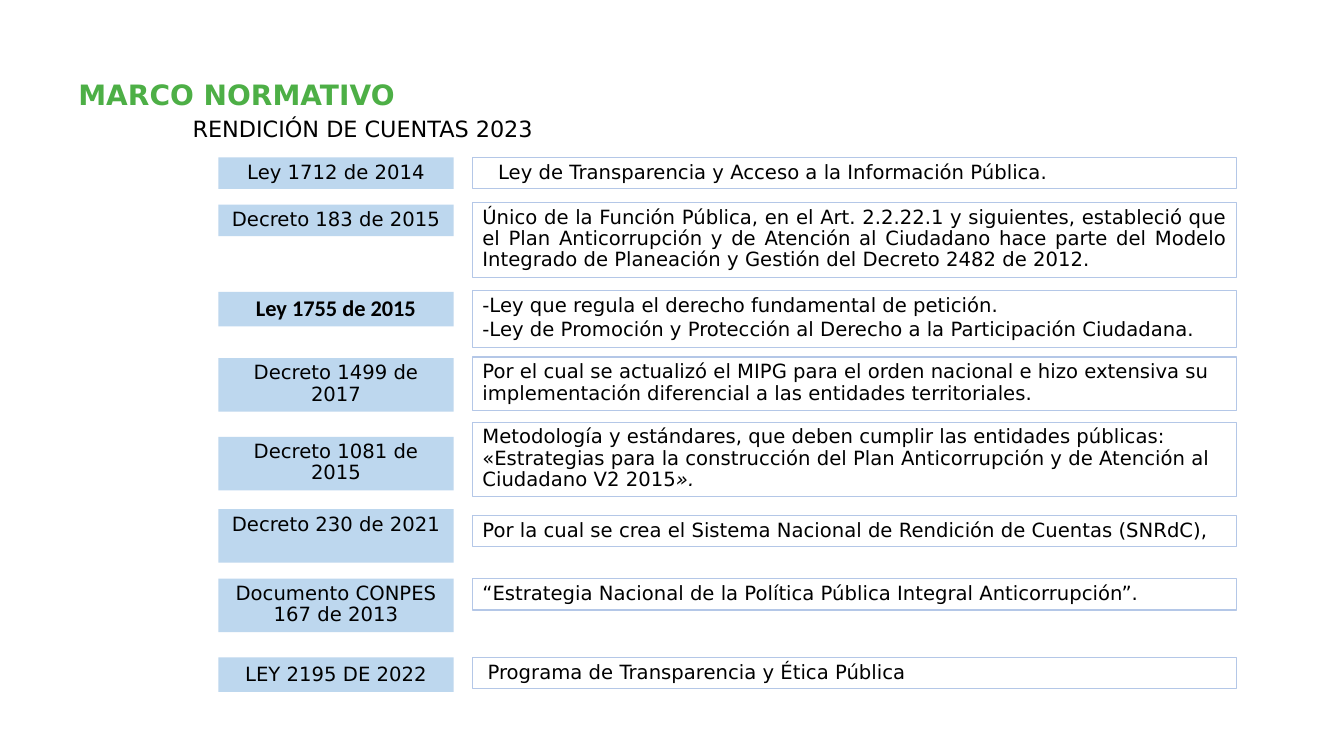
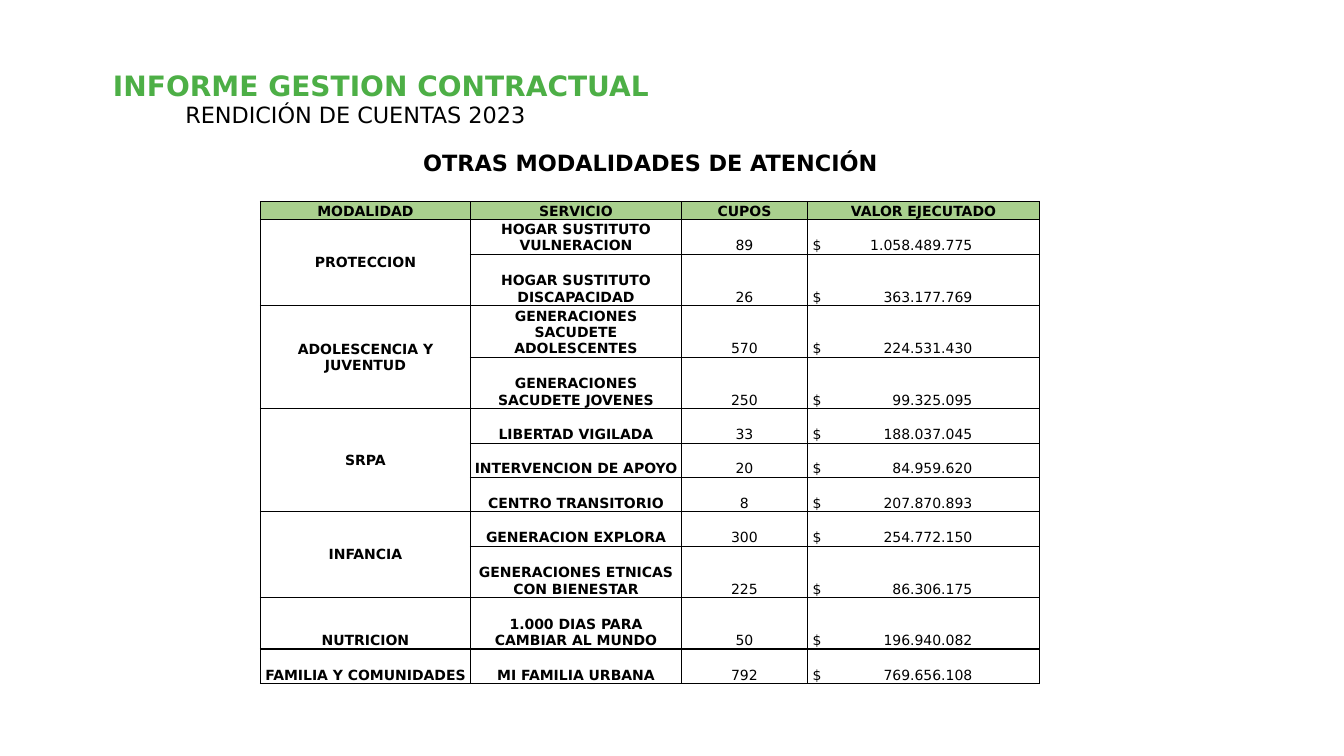
from lxml import etree
from pptx import Presentation
from pptx.dml.color import RGBColor
from pptx.enum.shapes import MSO_SHAPE
from pptx.enum.text import MSO_ANCHOR, PP_ALIGN
from pptx.oxml.ns import qn
from pptx.util import Pt

PX = 9525
RECT = MSO_SHAPE.RECTANGLE
TOP, MIDDLE, BOTTOM = MSO_ANCHOR.TOP, MSO_ANCHOR.MIDDLE, MSO_ANCHOR.BOTTOM
LEFT, CENTER, JUSTIFY = PP_ALIGN.LEFT, PP_ALIGN.CENTER, PP_ALIGN.JUSTIFY
FONT, ALT_FONT = "DejaVu Sans", "Calibri"
COLORS = {
    "title": "4DAF46",
    "text": "000000",
    "law": "BDD7EE",
    "outline": "B4C7E7",
    "header": "A9D08E",
    "border": "000000",
}
SUBTITLE = "RENDICIÓN DE CUENTAS 2023"

LAWS = [
    dict(law="Ley 1712 de 2014", law_box=(150, 30), about_box=(150, 30), indent=15,
         about=["Ley de Transparencia y Acceso a la Información Pública."]),
    dict(law="Decreto 183 de 2015", law_box=(195, 30), about_box=(193, 71), align=JUSTIFY,
         about=["Único de la Función Pública, en el Art. 2.2.22.1 y siguientes, estableció que "
                "el Plan Anticorrupción y de Atención al Ciudadano hace parte del Modelo "
                "Integrado de Planeación y Gestión del Decreto 2482 de 2012."]),
    dict(law="Ley 1755 de 2015", law_box=(278, 33), about_box=(277, 54),
         law_font=dict(size=16, bold=True, name=ALT_FONT),
         about=["-Ley que regula el derecho fundamental de petición.",
                "-Ley de Promoción y Protección al Derecho a la Participación Ciudadana."]),
    dict(law="Decreto 1499 de 2017", law_box=(341, 51), about_box=(340, 51),
         about=["Por el cual se actualizó el MIPG para el orden nacional e hizo extensiva su "
                "implementación diferencial a las entidades territoriales."]),
    dict(law="Decreto 1081 de 2015", law_box=(416, 51), about_box=(402, 71), tail="».",
         about=["Metodología y estándares, que deben cumplir las entidades públicas: "
                "«Estrategias para la construcción del Plan Anticorrupción y de Atención al "
                "Ciudadano V2 2015"]),
    dict(law="Decreto 230 de 2021", law_box=(485, 51), about_box=(491, 30),
         about=["Por la cual se crea el Sistema Nacional de Rendición de Cuentas (SNRdC),"]),
    dict(law="Documento CONPES 167 de 2013", law_box=(551, 51), about_box=(551, 30),
         about=["“Estrategia Nacional de la Política Pública Integral Anticorrupción”."]),
    dict(law="LEY 2195 DE 2022", law_box=(626, 33), about_box=(626, 30), indent=5,
         law_spacing=1.0, about=["Programa de Transparencia y Ética Pública"]),
]

HEADERS = ["MODALIDAD", "SERVICIO", "CUPOS", "VALOR EJECUTADO"]
COLUMNS = [200, 201, 120, 221]
HEADER_H = 17
GROUPS = [
    ("PROTECCION", [("HOGAR SUSTITUTO VULNERACION", "89", "1.058.489.775", 33),
                    ("HOGAR SUSTITUTO DISCAPACIDAD", "26", "363.177.769", 49)]),
    ("ADOLESCENCIA Y JUVENTUD",
     [("GENERACIONES SACUDETE ADOLESCENTES", "570", "224.531.430", 49),
      ("GENERACIONES SACUDETE JOVENES", "250", "99.325.095", 49)]),
    ("SRPA", [("LIBERTAD VIGILADA", "33", "188.037.045", 33),
              ("INTERVENCION DE APOYO", "20", "84.959.620", 32),
              ("CENTRO TRANSITORIO", "8", "207.870.893", 33)]),
    ("INFANCIA", [("GENERACION EXPLORA", "300", "254.772.150", 33),
                  ("GENERACIONES ETNICAS CON BIENESTAR", "225", "86.306.175", 49)]),
    ("NUTRICION", [("1.000 DIAS PARA CAMBIAR AL MUNDO", "50", "196.940.082", 49)]),
    ("FAMILIA Y COMUNIDADES", [("MI FAMILIA URBANA", "792", "769.656.108", 33)]),
]


def rgb(key):
    """Return the named colour."""
    return RGBColor.from_string(COLORS[key])


def px(*values):
    """Turn pixel lengths into EMU."""
    return [v * PX for v in values]


def format_run(r, size=14, bold=False, name=FONT, color="text", italic=False):
    """Set the font of one run."""
    r.font.size, r.font.bold, r.font.italic = Pt(size), bold, italic
    r.font.name = name
    r.font.color.rgb = rgb(color)


def write(tf, lines, align=LEFT, spacing=None, after=0, anchor=TOP, **font):
    """Fill a text frame with formatted paragraphs."""
    tf.word_wrap = True
    tf.vertical_anchor = anchor
    tf.text = "\n".join(lines)
    for p in tf.paragraphs:
        p.alignment = align
        p.space_after = Pt(after)
        if spacing:
            p.line_spacing = spacing
        for r in p.runs:
            format_run(r, **font)


def add_text(slide, box, text, **style):
    """Add a text box."""
    write(slide.shapes.add_textbox(*px(*box)).text_frame, [text], **style)


def add_heading_slide(prs, title, title_box, subtitle_box):
    """Add a slide with the shared green title and subtitle."""
    slide = prs.slides.add_slide(prs.slide_layouts[5])
    sp = slide.shapes.title
    sp.left, sp.top, sp.width, sp.height = px(*title_box)
    write(sp.text_frame, [title], size=20, bold=True, color="title")
    add_text(slide, subtitle_box, SUBTITLE, size=16, spacing=Pt(23.4))
    return slide


def add_box(slide, box, fill=None, line=None):
    """Add a flat rectangle and return its text frame."""
    sp = slide.shapes.add_shape(RECT, *px(*box))
    sp.shadow.inherit = False
    if fill:
        sp.fill.solid()
        sp.fill.fore_color.rgb = rgb(fill)
    else:
        sp.fill.background()
    if line:
        sp.line.color.rgb = rgb(line)
        sp.line.width = Pt(0.75)
    else:
        sp.line.fill.background()
    return sp.text_frame


def add_law_row(slide, left, row):
    """Place a law and its description side by side."""
    top, height = row["law_box"]
    tf = add_box(slide, (left, top, 224, height), fill="law")
    write(tf, [row["law"]], CENTER, row.get("law_spacing", 0.9), **row.get("law_font", {}))
    top, height = row["about_box"]
    tf = add_box(slide, (left + 242, top, 728, height), line="outline")
    write(tf, row["about"], row.get("align", LEFT), 0.9, 2)
    p = tf.paragraphs[0]
    if "indent" in row:
        p._p.get_or_add_pPr().set("marL", str(row["indent"] * PX))
    if "tail" in row:
        r = p.add_run()
        r.text = row["tail"]
        format_run(r, italic=True)


def set_borders(cell, top, bottom):
    """Draw the four cell borders, with the given top and bottom widths."""
    tc_pr = cell._tc.get_or_add_tcPr()
    for side, width in zip("LRTB", (1, 1, top, bottom)):
        ln = etree.SubElement(tc_pr, qn(f"a:ln{side}"), w=str(Pt(width)))
        fill = etree.SubElement(ln, qn("a:solidFill"))
        etree.SubElement(fill, qn("a:srgbClr"), val=COLORS["border"])


def style_cell(cell, text, fill=None, top=1, bottom=1, **style):
    """Write one table cell with its margins, borders and fill."""
    cell.margin_left, cell.margin_right, cell.margin_top, cell.margin_bottom = px(1, 1, 1, 0)
    set_borders(cell, top, bottom)
    if fill:
        cell.fill.solid()
        cell.fill.fore_color.rgb = rgb(fill)
    else:
        cell.fill.background()
    anchor = style.pop("anchor", BOTTOM)
    write(cell.text_frame, [text], size=10, **style)
    cell.vertical_anchor = anchor


def align_amount(cell):
    """Keep the currency sign left and the amount on a right tab."""
    cell.margin_left = 5 * PX
    p_pr = cell.text_frame.paragraphs[0]._p.get_or_add_pPr()
    tabs = etree.SubElement(p_pr, qn("a:tabLst"))
    etree.SubElement(tabs, qn("a:tab"), pos=str(152 * PX), algn="r")


def add_contract_table(slide, left, top):
    """Add the table of services grouped by modality."""
    heights = [HEADER_H] + [s[-1] for _, services in GROUPS for s in services]
    box = px(left, top, sum(COLUMNS), sum(heights))
    table = slide.shapes.add_table(len(heights), len(COLUMNS), *box).table
    table.first_row = table.horz_banding = False
    for col, width in zip(table.columns, COLUMNS):
        col.width = width * PX
    for row, height in zip(table.rows, heights):
        row.height = height * PX
    for c, text in enumerate(HEADERS):
        style_cell(table.cell(0, c), text, "header", align=CENTER, bold=True)
    first = 1
    for modality, services in GROUPS:
        last = first + len(services) - 1
        for i, (service, places, amount, _) in enumerate(services, first):
            edges = dict(top=1 if i == first else 0.5, bottom=1 if i == last else 0.5)
            style_cell(table.cell(i, 0), modality if i == first else "", align=CENTER,
                       bold=True, anchor=MIDDLE if last > first else BOTTOM)
            style_cell(table.cell(i, 1), service, align=CENTER, bold=True, **edges)
            style_cell(table.cell(i, 2), places, align=CENTER, **edges)
            style_cell(table.cell(i, 3), f"$\t{amount}", **edges)
            align_amount(table.cell(i, 3))
        if last > first:
            table.cell(first, 0).merge(table.cell(last, 0))
        first = last + 1


def build_laws(prs):
    """Build the slide of the legal framework."""
    slide = add_heading_slide(prs, "MARCO NORMATIVO", (65, 69, 698, 42), (174, 99, 640, 37))
    for row in LAWS:
        add_law_row(slide, 208, row)


def build_contracts(prs):
    """Build the slide of the contract report."""
    slide = add_heading_slide(prs, "INFORME GESTION CONTRACTUAL",
                              (98, 60, 966, 42), (167, 86, 640, 37))
    add_contract_table(slide, 248, 192)
    add_text(slide, (366, 137, 507, 36), "OTRAS MODALIDADES DE ATENCIÓN",
             align=CENTER, size=16, bold=True)


def main():
    """Build and save the presentation."""
    prs = Presentation()
    prs.slide_width, prs.slide_height = px(1280, 720)
    build_laws(prs)
    build_contracts(prs)
    prs.save("out.pptx")


if __name__ == "__main__":
    main()
